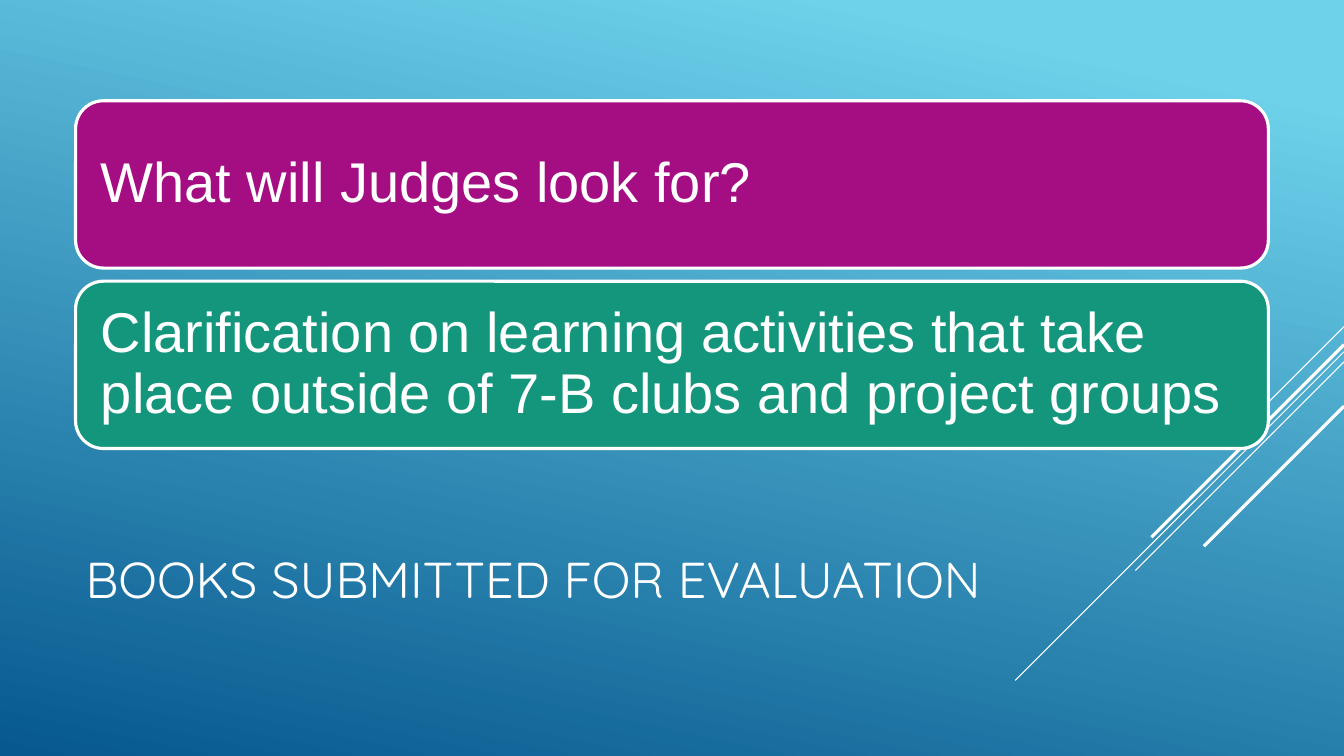
"""Build the slide on books submitted for evaluation."""
from lxml.etree import SubElement
from pptx import Presentation
from pptx.dml.color import RGBColor as RGB
from pptx.enum.shapes import MSO_CONNECTOR as CONNECTOR, MSO_SHAPE as SHAPE
from pptx.enum.text import MSO_ANCHOR as ANCHOR, MSO_AUTO_SIZE as FIT, PP_ALIGN as ALIGN
from pptx.oxml.ns import qn
from pptx.util import Inches, Pt

COLORS = {"sky": "6ED2EB", "deep": "06588E", "white": "FFFFFF",
          "judges": "A50E82", "clarification": "14967C"}
WIDTH, HEIGHT = 13.33, 7.5
LEFT, TOP = 0.75, 1
CARD_WIDTH, CARD_HEIGHT, CARD_PITCH = 11.83, 1.66, 1.79


def color(name):
    return RGB.from_string(COLORS[name])


def write(frame, text, size, font, inset=(0.1, 0.05), spacing=None):
    frame.word_wrap = True
    frame.auto_size = FIT.NONE
    frame.vertical_anchor = ANCHOR.MIDDLE
    frame.margin_left = frame.margin_right = Inches(inset[0])
    frame.margin_top = frame.margin_bottom = Inches(inset[1])
    frame.text = text
    line = frame.paragraphs[0]
    line.alignment = ALIGN.LEFT
    line.line_spacing = spacing
    line.font.size = Pt(size)
    line.font.name = font
    line.font.color.rgb = color("white")


deck = Presentation()
deck.slide_width, deck.slide_height = Inches(WIDTH), Inches(HEIGHT)
slide = deck.slides.add_slide(deck.slide_layouts[5])

backdrop = slide.background.fill
backdrop.gradient()
backdrop.gradient_angle = 360 - 102
for stop, (name, share) in zip(backdrop.gradient_stops, [("sky", 0.1), ("deep", 1)]):
    stop.color.rgb = color(name)
    stop.position = share

for start, reach, weight in [(3.24, 1, 0.75), (3.49, 3.26, 0.75), (3.59, 2.07, 0.75),
                             (3.42, 1.91, 2.25), (4.03, 1.39, 2.25)]:
    ray = slide.shapes.add_connector(
        CONNECTOR.STRAIGHT, Inches(WIDTH), Inches(start),
        Inches(WIDTH - reach), Inches(start + reach))
    ray.line.color.rgb = color("white")
    ray.line.width = Pt(weight)
    SubElement(ray._element.spPr, qn("a:effectLst"))

title = slide.shapes.title
title.left, title.top = Inches(LEFT), Inches(4.91)
title.width, title.height = Inches(WIDTH * 0.7), Inches(HEIGHT * 0.22)
write(title.text_frame, "BOOKS SUBMITTED FOR EVALUATION", size=36, font="Quicksand")

topics = [
    ("judges", "What will Judges look for?"),
    ("clarification", "Clarification on learning activities that take place "
                      "outside of 7-B clubs and project groups"),
]
for row, (name, topic) in enumerate(topics):
    card = slide.shapes.add_shape(
        SHAPE.ROUNDED_RECTANGLE, Inches(LEFT), Inches(TOP + row * CARD_PITCH),
        Inches(CARD_WIDTH), Inches(CARD_HEIGHT))
    card.shadow.inherit = False
    card.fill.solid()
    card.fill.fore_color.rgb = color(name)
    card.line.color.rgb = color("white")
    card.line.width = Pt(2.25)
    write(card.text_frame, topic, size=40, font="Arial", inset=(0.17, 0.17), spacing=0.9)

deck.save("out.pptx")
